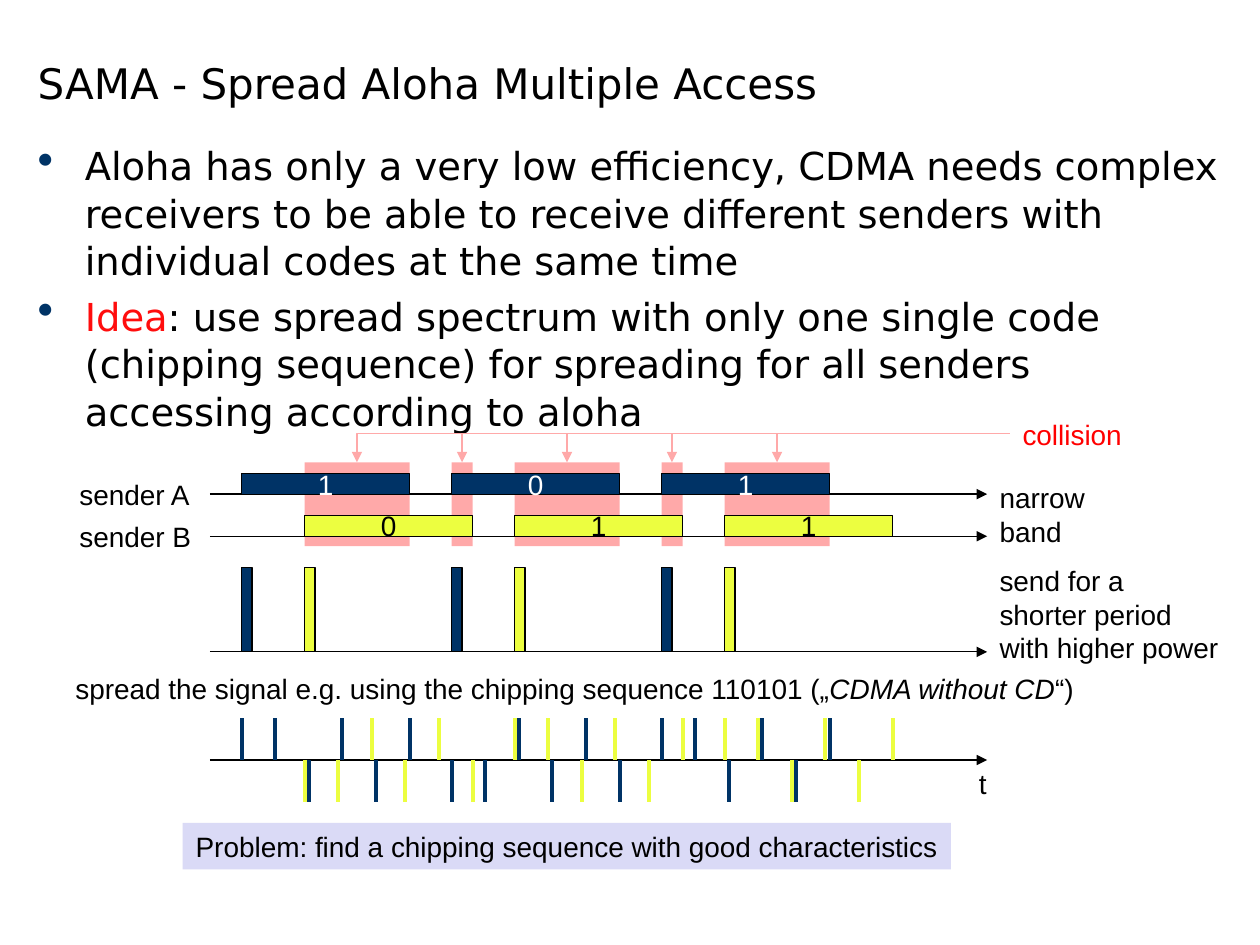
from lxml.etree import SubElement
from pptx import Presentation
from pptx.dml.color import RGBColor
from pptx.enum.shapes import MSO_CONNECTOR as Connector, MSO_SHAPE as Shape
from pptx.enum.text import MSO_ANCHOR as Anchor, MSO_AUTO_SIZE as AutoSize, PP_ALIGN as Align
from pptx.oxml.ns import qn
from pptx.util import Cm, Pt

COLORS = {
    "black": "000000",
    "white": "FFFFFF",
    "navy": "003366",
    "yellow": "ECFE40",
    "pink": "FFA9A9",
    "idea": "FF0D0D",
    "red": "FF0000",
    "lavender": "DADAF6",
}

# Signal timing along the horizontal axis, in cm
BIT_PERIOD = 5.334 / 1.26
BIT_WIDTH = BIT_PERIOD * 0.8
CHIP_GAP = BIT_WIDTH / 5
CHIPPING_SEQUENCE = "110101"
AXIS_LEFT, AXIS_RIGHT = 4.23, 19.9
CHIP_AXIS, CHIP_HEIGHT = 15.32, 0.85
# Sender: fill, text colour, first bit, top of its bits, data
SENDERS = [
    ("navy", "white", 4.87, 9.55, "101"),
    ("yellow", "black", 6.14, 10.39, "011"),
]


def rgb(name):
    return RGBColor.from_string(COLORS[name])


def bit_starts(first):
    return [first + BIT_PERIOD * index for index in range(3)]


def collisions():
    """Return (left, width) of every span where both senders are active."""
    starts_a, starts_b = (bit_starts(sender[2]) for sender in SENDERS)
    spans = []
    for a in starts_a:
        for b in starts_b:
            left, right = max(a, b), min(a, b) + BIT_WIDTH
            if right > left:
                spans.append((left, right - left))
    return spans


class SlideBuilder:
    def __init__(self, slide, font="Arial", size=16):
        self.slide = slide
        self.font = font
        self.size = size

    def format(self, paragraph, color="black", font=None, size=None):
        for run in paragraph.runs:
            run.font.name = font or self.font
            run.font.size = Pt(size or self.size)
            run.font.color.rgb = rgb(color)

    def text(self, left, top, width, height, content, color="black", align=Align.LEFT,
             anchor=Anchor.MIDDLE, wrap=False, font=None, size=None):
        box = self.slide.shapes.add_textbox(Cm(left), Cm(top), Cm(width), Cm(height))
        frame = box.text_frame
        frame.text = content
        frame.word_wrap = wrap
        frame.vertical_anchor = anchor
        frame.auto_size = AutoSize.NONE if wrap else AutoSize.SHAPE_TO_FIT_TEXT
        for paragraph in frame.paragraphs:
            paragraph.alignment = align
            self.format(paragraph, color, font, size)
        return frame

    def bullet(self, paragraph):
        properties = paragraph._p.get_or_add_pPr()
        properties.set("marL", str(Cm(0.95)))
        properties.set("indent", str(-Cm(0.95)))
        color = SubElement(properties, qn("a:buClr"))
        SubElement(color, qn("a:srgbClr"), val=COLORS["navy"])
        SubElement(properties, qn("a:buSzPct"), val="120000")
        SubElement(properties, qn("a:buChar"), char="•")

    def rectangle(self, left, top, width, height, fill, outline=True, label="", color="black"):
        shape = self.slide.shapes.add_shape(
            Shape.RECTANGLE, Cm(left), Cm(top), Cm(width), Cm(height))
        shape.shadow.inherit = False
        shape.fill.solid()
        shape.fill.fore_color.rgb = rgb(fill)
        if outline:
            shape.line.color.rgb = rgb("black")
            shape.line.width = Pt(0.75)
        else:
            shape.line.fill.background()
        if label:
            frame = shape.text_frame
            frame.text = label
            frame.word_wrap = False
            frame.vertical_anchor = Anchor.MIDDLE
            frame.paragraphs[0].alignment = Align.CENTER
            self.format(frame.paragraphs[0], color)

    def line(self, start, end, color="black", width=0.75, arrow=True, bent=False, shapes=None):
        kind = Connector.ELBOW if bent else Connector.STRAIGHT
        connector = (shapes or self.slide.shapes).add_connector(
            kind, *(Cm(value) for value in (*start, *end)))
        connector.line.color.rgb = rgb(color)
        connector.line.width = Pt(width)
        properties = connector._element.spPr
        if bent:
            properties.find(qn("a:prstGeom")).set("prst", "bentConnector2")
        if arrow:
            SubElement(connector.line._get_or_add_ln(), qn("a:tailEnd"), type="triangle")
        SubElement(properties, qn("a:effectLst"))

    def axis(self, top):
        self.line((AXIS_LEFT, top), (AXIS_RIGHT, top))

    def chips(self, left, bit, color):
        """Draw one bit as chips: up for 1, down for 0, inverted for a 0 bit."""
        group = self.slide.shapes.add_group_shape()
        for index, chip in enumerate(CHIPPING_SEQUENCE):
            x = left + CHIP_GAP * index
            direction = -1 if chip == bit or (bit == "0" and chip == "0") else 1
            if bit == "0":
                direction = 1 if chip == "1" else -1
            self.line((x, CHIP_AXIS), (x, CHIP_AXIS + direction * CHIP_HEIGHT),
                      color, 2.25, arrow=False, shapes=group.shapes)


def add_body(builder):
    frame = builder.text(
        0.51, 2.72, 24.41, 14.86,
        "Aloha has only a very low efficiency, CDMA needs complex receivers to be able "
        "to receive different senders with individual codes at the same time\nIdea",
        anchor=Anchor.TOP, wrap=True, font="DejaVu Sans", size=22)
    idea = frame.paragraphs[1]
    idea.add_run().text = (": use spread spectrum with only one single code (chipping sequence) "
                           "for spreading for all senders accessing according to aloha")
    builder.format(idea, font="DejaVu Sans", size=22)
    idea.runs[0].font.color.rgb = rgb("idea")
    idea.space_before = Pt(4.4)
    for paragraph in frame.paragraphs:
        paragraph.line_spacing = 1.03
        builder.bullet(paragraph)


def add_signals(builder):
    for left, width in collisions():
        builder.rectangle(left, 9.32, width, 1.69, "pink", outline=False)
    for top in (9.96, 10.81, 13.14, CHIP_AXIS):
        builder.axis(top)
    for fill, color, first, top, data in SENDERS:
        for left, bit in zip(bit_starts(first), data):
            builder.rectangle(left, top, BIT_WIDTH, 0.42, fill, label=bit, color=color)
            builder.rectangle(left, 11.44, 0.21, 1.69, fill)
            builder.chips(left, bit, fill)
    for left, width in collisions():
        builder.line((20.36, 8.74), (left + width / 2, 9.32), "pink", bent=True)


def add_labels(builder):
    builder.text(1.35, 9.5, 2.77, 0.94, "sender A")
    builder.text(1.35, 10.34, 2.77, 0.94, "sender B")
    builder.text(19.9, 9.55, 2.24, 1.63, "narrow\vband")
    builder.text(19.9, 11.23, 4.93, 2.29, "send for a\nshorter period\nwith higher power")
    builder.text(19.48, 15.32, 0.66, 0.94, "t", align=Align.CENTER)
    builder.text(20.36, 8.28, 2.51, 0.94, "collision", "red", Align.CENTER)
    spread = builder.text(1.27, 13.41, 20.73, 0.94,
                          "spread the signal e.g. using the chipping sequence 110101 („")
    paragraph = spread.paragraphs[0]
    for part in ("CDMA without CD", "“)"):
        paragraph.add_run().text = part
    builder.format(paragraph)
    paragraph.runs[1].font.italic = True
    builder.rectangle(3.68, 16.59, 15.49, 0.94, "lavender", outline=False,
                      label="Problem: find a chipping sequence with good characteristics")


def main():
    presentation = Presentation()
    presentation.slide_width, presentation.slide_height = Cm(25.4), Cm(19.05)
    builder = SlideBuilder(presentation.slides.add_slide(presentation.slide_layouts[6]))
    add_body(builder)
    builder.text(0.51, 0, 16.79, 2.31, "SAMA - Spread Aloha Multiple Access",
                 anchor=Anchor.BOTTOM, wrap=True, font="DejaVu Sans", size=24)
    add_signals(builder)
    add_labels(builder)
    presentation.save("out.pptx")


if __name__ == "__main__":
    main()
